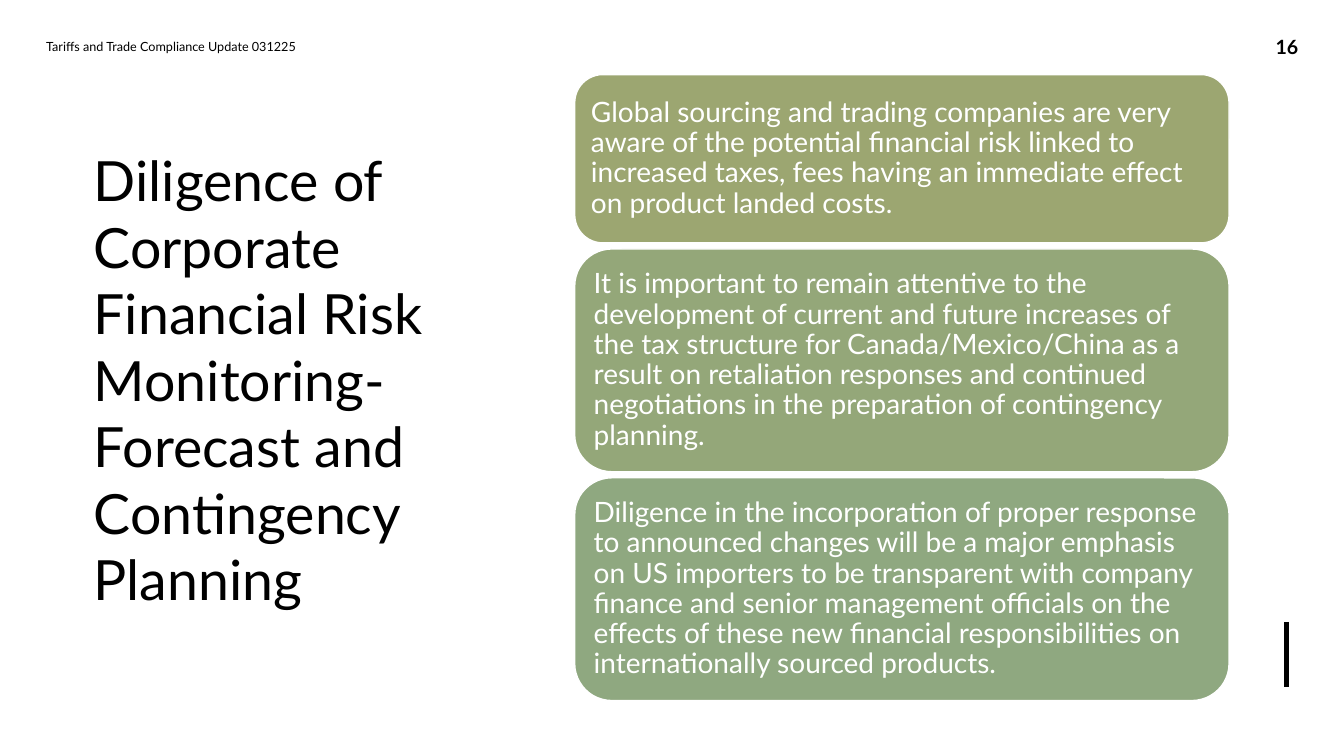
"""Build the slide on corporate financial risk monitoring and contingency planning."""
from pptx import Presentation
from pptx.dml.color import RGBColor
from pptx.enum.shapes import MSO_CONNECTOR, MSO_SHAPE
from pptx.enum.text import MSO_ANCHOR, MSO_AUTO_SIZE, PP_ALIGN
from pptx.oxml.ns import qn
from pptx.util import Inches, Pt

COLORS = {
    "black": "000000",
    "white": "FFFFFF",
    "olive": "9CA671",
    "moss": "94A779",
    "sage": "8FA880",
}
CARD_GAP = 0.06


def color(name):
    return RGBColor.from_string(COLORS[name])


def write(shape, text, size, ink, align=PP_ALIGN.LEFT, bold=False, spacing=1.0):
    frame = shape.text_frame
    frame.word_wrap = True
    frame.auto_size = MSO_AUTO_SIZE.NONE
    frame.vertical_anchor = MSO_ANCHOR.MIDDLE
    para = frame.paragraphs[0]
    para.alignment = align
    para.line_spacing = spacing
    span = para.add_run()
    span.text = text
    span.font.name = "Lato"
    span.font.size = Pt(size)
    span.font.bold = bold
    span.font.color.rgb = color(ink)


deck = Presentation()
deck.slide_width = Inches(13.33)
deck.slide_height = Inches(7.5)
page = deck.slides.add_slide(deck.slide_layouts[5])

title = page.shapes.title
title.left, title.top = Inches(0.83), Inches(0.94)
title.width, title.height = Inches(3.77), Inches(5.64)
write(
    title,
    "Diligence of Corporate Financial Risk Monitoring-Forecast and Contingency Planning",
    39.6,
    "black",
)

header = page.shapes.add_textbox(Inches(0.36), Inches(0.26), Inches(4.5), Inches(0.4))
write(header, "Tariffs and Trade Compliance Update 031225", 9, "black")

number = page.shapes.add_textbox(Inches(12.35), Inches(0.26), Inches(0.83), Inches(0.4))
write(number, "16", 14, "black", PP_ALIGN.CENTER, bold=True)

accent = page.shapes.add_connector(
    MSO_CONNECTOR.STRAIGHT, Inches(12.76), Inches(6.17), Inches(12.76), Inches(6.82)
)
accent.line.color.rgb = color("black")
accent.line.width = Pt(3)
properties = accent._element.spPr
properties.append(properties.makeelement(qn("a:effectLst"), {}))

cards = [
    (1.67, "olive", "Global sourcing and trading companies are very aware of the potential "
     "financial risk linked to increased taxes, fees having an immediate effect on product "
     "landed costs."),
    (2.21, "moss", "It is important to remain attentive to the development of current and "
     "future increases of the tax structure for Canada/Mexico/China as a result on "
     "retaliation responses and continued negotiations in the preparation of contingency "
     "planning."),
    (2.21, "sage", "Diligence in the incorporation of proper response to announced changes "
     "will be a major emphasis on US importers to be transparent with company finance and "
     "senior management officials on the effects of these new financial responsibilities on "
     "internationally sourced products."),
]
top = 0.74
for height, fill, text in cards:
    card = page.shapes.add_shape(
        MSO_SHAPE.ROUNDED_RECTANGLE, Inches(5.7), Inches(top), Inches(6.49), Inches(height)
    )
    card.shadow.inherit = False
    card.fill.solid()
    card.fill.fore_color.rgb = color(fill)
    card.line.color.rgb = color("white")
    card.line.width = Pt(1)
    frame = card.text_frame
    frame.margin_left = frame.margin_right = Inches(0.08)
    frame.margin_top = frame.margin_bottom = Inches(0.08)
    write(card, text, 20, "white", spacing=0.9)
    top += height + CARD_GAP

deck.save("out.pptx")
